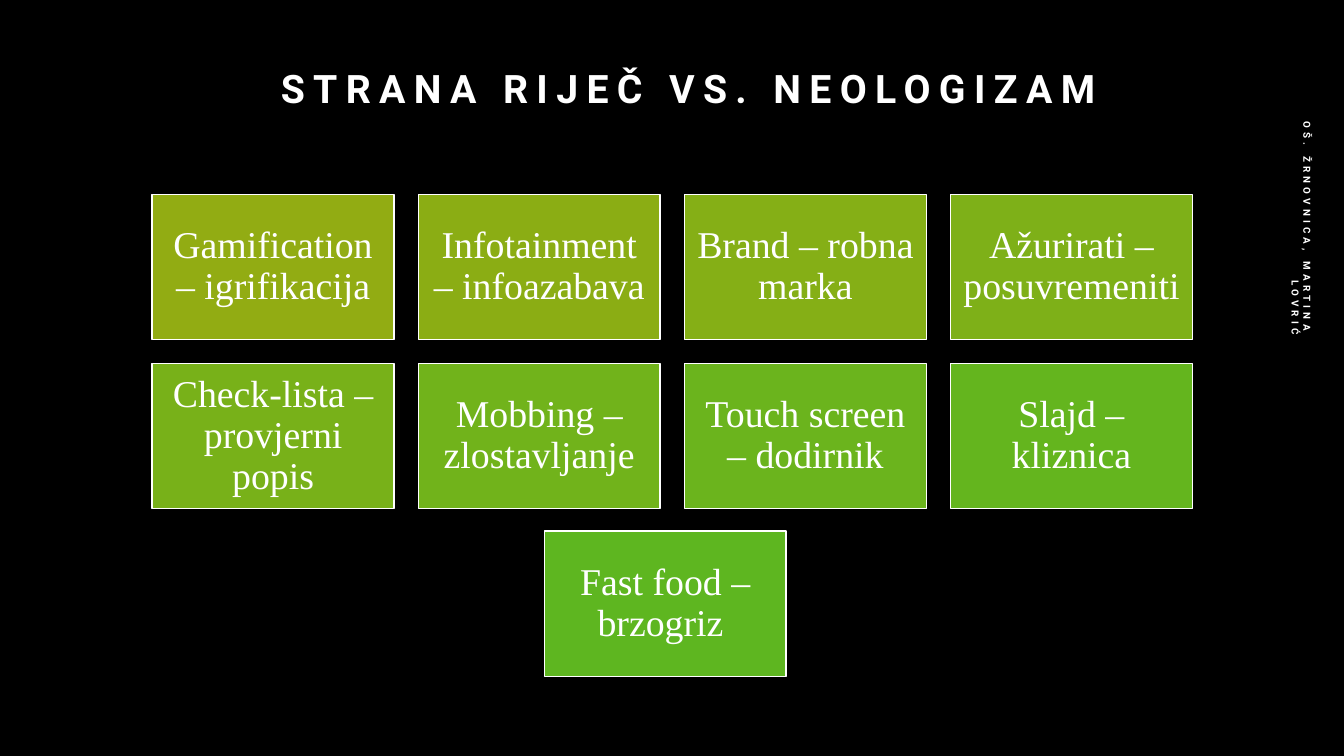
"""Build a slide of foreign words paired with their Croatian neologisms."""
from pptx import Presentation
from pptx.dml.color import RGBColor
from pptx.enum.shapes import MSO_SHAPE
from pptx.enum.text import MSO_ANCHOR, MSO_AUTO_SIZE, PP_ALIGN
from pptx.util import Pt

RECT = MSO_SHAPE.RECTANGLE
MID, LOW = MSO_ANCHOR.MIDDLE, MSO_ANCHOR.BOTTOM
MITTE, RIGHT = PP_ALIGN.CENTER, PP_ALIGN.RIGHT
FIXED = MSO_AUTO_SIZE.NONE
COLORS = {"back": "000000", "white": "FFFFFF"}
TILES = {
    "Gamification – igrifikacija": "92AC13",
    "Infotainment – infoazabava": "8BAD14",
    "Brand – robna marka": "85AF16",
    "Ažurirati – posuvremeniti": "7EB018",
    "Check-lista – provjerni popis": "78B119",
    "Mobbing – zlostavljanje": "71B31B",
    "Touch screen – dodirnik": "6BB41D",
    "Slajd – kliznica": "64B51E",
    "Fast food – brzogriz ": "5EB620",
}
COLS = 4
WIDE, HIGH = 172.8, 103.68
LEFT, TOP = 108.72, 138.96
STEP_X, STEP_Y = 190.08, 120.6
LAST_X, LAST_Y = 388.8, 379.44


def write(shape, text, font, size, bold=False, align=MITTE, anchor=MID,
          lines=1.0, after=0, track=0, inset=None):
    frame = shape.text_frame
    frame.word_wrap = True
    frame.auto_size = FIXED
    frame.vertical_anchor = anchor
    if inset is not None:
        frame.margin_left = frame.margin_right = Pt(inset)
        frame.margin_top = frame.margin_bottom = Pt(inset)
    para = frame.paragraphs[0]
    para.alignment = align
    para.line_spacing = lines
    para.space_before = Pt(0)
    para.space_after = Pt(after)
    run = para.add_run()
    run.text = text
    run.font.name = font
    run.font.size = Pt(size)
    run.font.bold = bold
    run.font.color.rgb = RGBColor.from_string(COLORS["white"])
    if track:
        run.font._element.set("spc", str(track * 100))


deck = Presentation()
deck.slide_width, deck.slide_height = Pt(960), Pt(540)
slide = deck.slides.add_slide(deck.slide_layouts[5])
slide.background.fill.solid()
slide.background.fill.fore_color.rgb = RGBColor.from_string(COLORS["back"])

title = slide.shapes.title
title.left, title.top = Pt(131.76), Pt(15.12)
title.width, title.height = Pt(720), Pt(68.4)
write(title, "STRANA RIJEČ VS. NEOLOGIZAM", "Roboto", 28, bold=True,
      anchor=LOW, lines=1.2, track=6)

side = slide.shapes.add_textbox(Pt(824.4), Pt(126.72), Pt(210.24), Pt(28.8))
side.rotation = 90
write(side, "OŠ. ŽRNOVNICA, MARTINA LOVRIĆ", "Roboto", 7, bold=True,
      align=RIGHT, after=6, track=3)

for i, (words, color) in enumerate(TILES.items()):
    row, col = divmod(i, COLS)
    x, y = LEFT + col * STEP_X, TOP + row * STEP_Y
    if i == len(TILES) - 1:
        x, y = LAST_X, LAST_Y
    tile = slide.shapes.add_shape(RECT, Pt(x), Pt(y), Pt(WIDE), Pt(HIGH))
    tile.shadow.inherit = False
    tile.fill.solid()
    tile.fill.fore_color.rgb = RGBColor.from_string(color)
    tile.line.color.rgb = RGBColor.from_string(COLORS["white"])
    tile.line.width = Pt(1)
    write(tile, words, "Times New Roman", 27, lines=0.9, inset=8)

deck.save("out.pptx")
